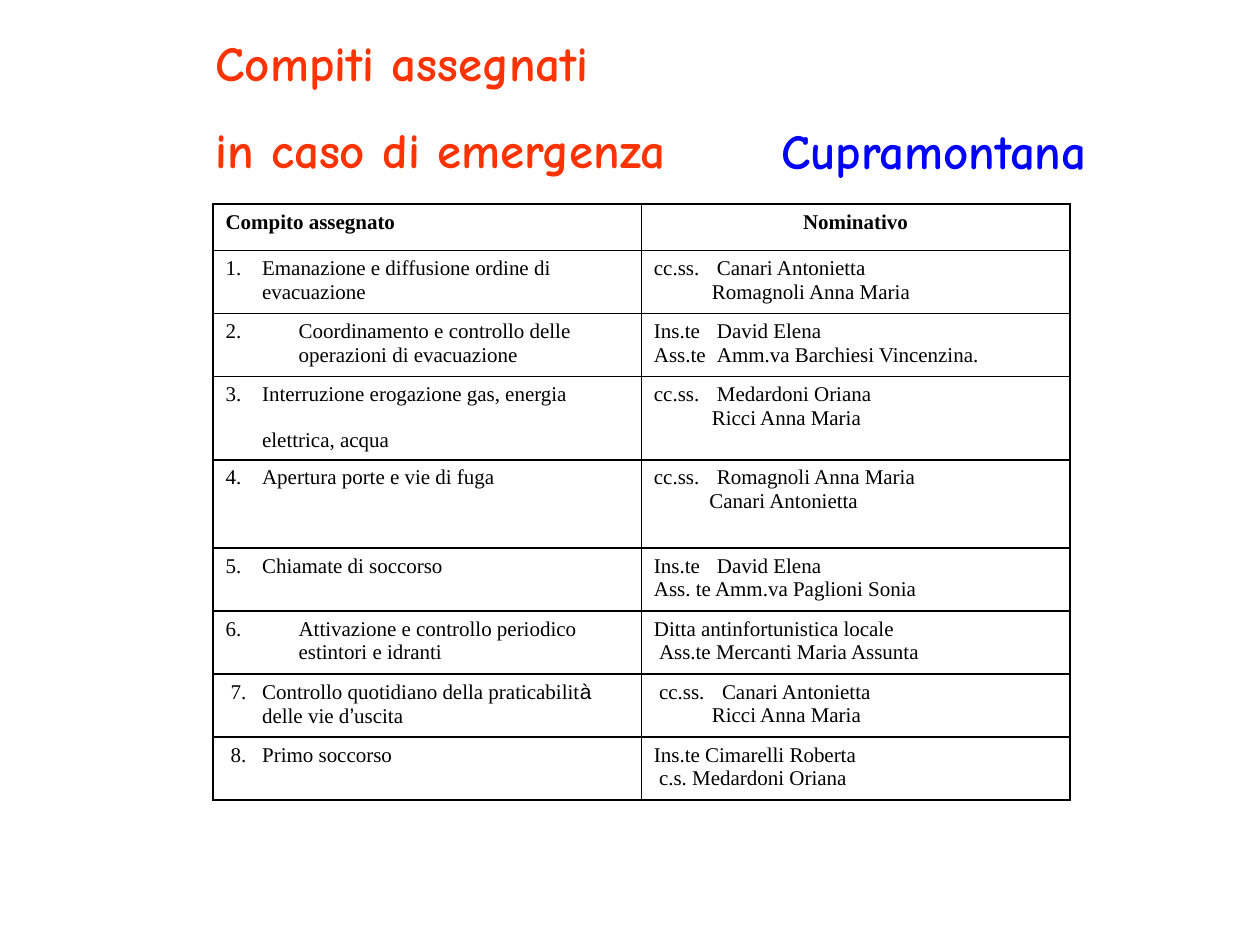
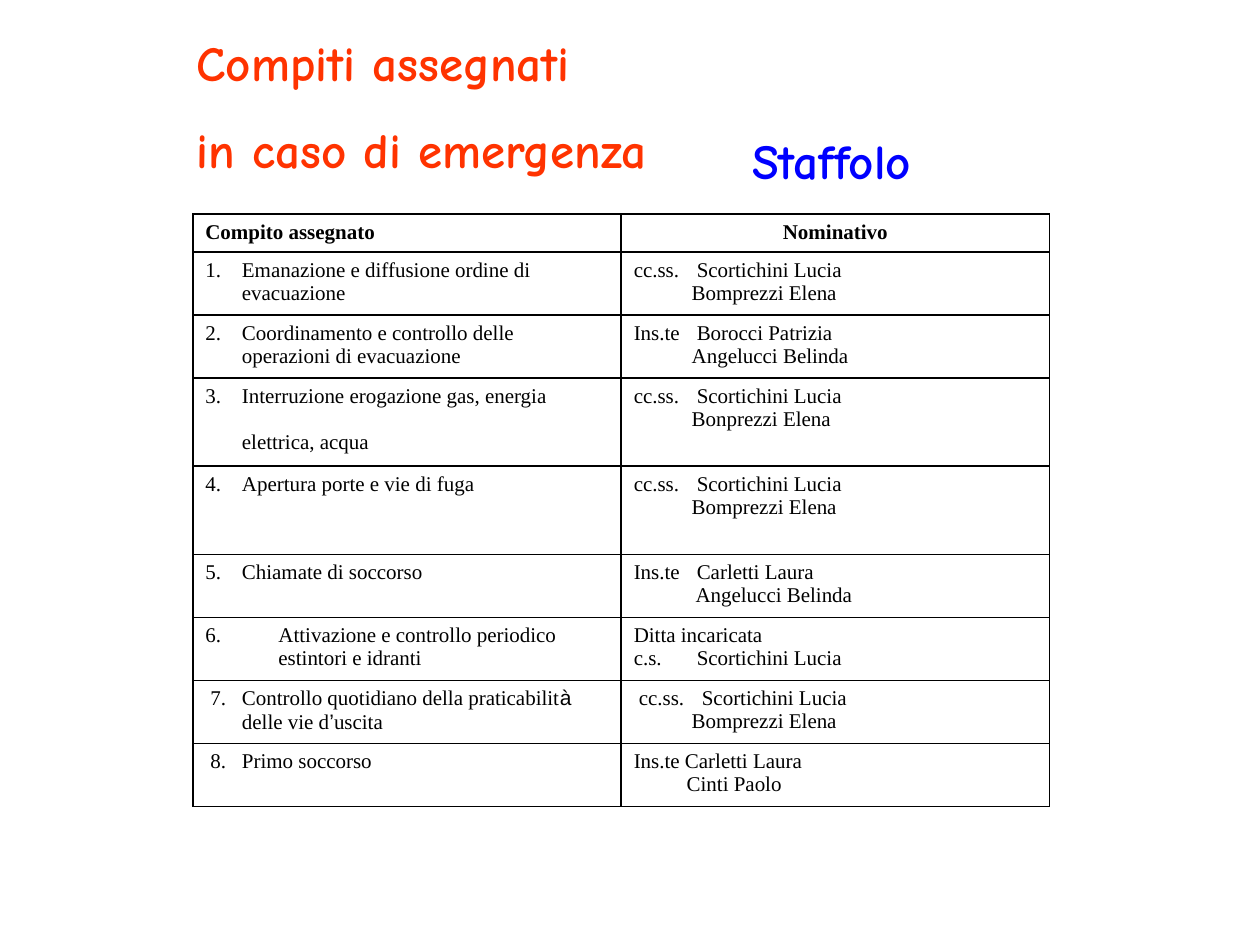
"""Build two slides listing emergency duties for two school sites."""
from dataclasses import dataclass
from itertools import groupby

from lxml.etree import SubElement
from pptx import Presentation
from pptx.dml.color import RGBColor
from pptx.enum.text import MSO_ANCHOR, MSO_AUTO_SIZE, PP_ALIGN
from pptx.oxml.ns import qn
from pptx.util import Inches, Pt


@dataclass(frozen=True)
class Theme:
    """Colours, fonts and sizes shared by the slides."""
    title_color: str = "FF3300"
    site_color: str = "0000FF"
    ink: str = "000000"
    heading_font: str = "Comic Neue"
    table_font: str = "Times New Roman"
    accent_font: str = "Arial"
    accent_letters: str = "à’"
    heading_size: int = 28
    table_size: int = 12
    heading_gap: int = 16
    border: float = 1


@dataclass(frozen=True)
class Line:
    """One line of a table cell with its indents in inches."""
    text: str
    left: float = 0
    start: float = 0
    tab: float = 0
    number: int = 0
    before: float = 0


THEME = Theme()
TITLE = ["Compiti assegnati", "in caso di emergenza"]
HEADERS = ["Compito assegnato", "Nominativo"]
COLUMN_WIDTH = 3.4
NARROW, WIDE, NUDGE = 0.29, 0.58, 0.04
NAME_INDENT, TEACHER_INDENT = 0.46, 0.49


def duty(number, lines, left=NARROW, start=0, gap=0):
    """Return a numbered line followed by its indented continuation lines."""
    first = Line(lines[0], left, start, number=number)
    return [first] + [Line(text, left, left, before=gap) for text in lines[1:]]


def pair(role, first, second, indent=NAME_INDENT, start=0):
    """Return two names aligned after a role."""
    return [Line(f"{role}\t{first}", start, start, tab=indent), Line(second, indent, indent)]


def duties(coordination_indent):
    """Return the eight duties, with the given indent for the second."""
    return [
        duty(1, ["Emanazione e diffusione ordine di", "evacuazione"]),
        duty(2, ["Coordinamento e controllo delle", "operazioni di evacuazione"], coordination_indent),
        duty(3, ["Interruzione erogazione gas, energia", "elettrica, acqua"], gap=13),
        duty(4, ["Apertura porte e vie di fuga"]),
        duty(5, ["Chiamate di soccorso"]),
        duty(6, ["Attivazione e controllo periodico", "estintori e idranti"], WIDE),
        duty(7, ["Controllo quotidiano della praticabilità", "delle vie d’uscita"], start=NUDGE),
        duty(8, ["Primo soccorso"], start=NUDGE),
    ]


CUPRAMONTANA_PEOPLE = [
    pair("cc.ss.", "Canari Antonietta", "Romagnoli Anna Maria"),
    [Line("Ins.te\tDavid Elena", tab=TEACHER_INDENT),
     Line("Ass.te\tAmm.va Barchiesi Vincenzina.", tab=TEACHER_INDENT)],
    pair("cc.ss.", "Medardoni Oriana", "Ricci Anna Maria"),
    pair("cc.ss.", "Romagnoli Anna Maria", "Canari Antonietta", 0.44),
    [Line("Ins.te\tDavid Elena", tab=TEACHER_INDENT), Line("Ass. te Amm.va Paglioni Sonia")],
    [Line("Ditta antinfortunistica locale"), Line("Ass.te Mercanti Maria Assunta", NUDGE, NUDGE)],
    pair("cc.ss.", "Canari Antonietta", "Ricci Anna Maria", start=NUDGE),
    [Line("Ins.te Cimarelli Roberta"), Line("c.s. Medardoni Oriana", NUDGE, NUDGE)],
]

STAFFOLO_PEOPLE = [
    pair("cc.ss.", "Scortichini Lucia", "Bomprezzi Elena"),
    pair("Ins.te", "Borocci Patrizia", "Angelucci Belinda"),
    pair("cc.ss.", "Scortichini Lucia", "Bonprezzi Elena"),
    pair("cc.ss.", "Scortichini Lucia", "Bomprezzi Elena"),
    pair("Ins.te", "Carletti Laura", "Angelucci Belinda", TEACHER_INDENT),
    [Line("Ditta incaricata"), Line("c.s.\tScortichini Lucia", tab=0.35)],
    pair("cc.ss.", "Scortichini Lucia", "Bomprezzi Elena", start=NUDGE),
    [Line("Ins.te Carletti Laura"), Line("Cinti Paolo", 0.42, 0.42)],
]


def add_text(paragraph, text, font=THEME.table_font, size=THEME.table_size,
             color=THEME.ink, bold=False, align=PP_ALIGN.LEFT, before=0):
    """Write formatted text, giving table accents their own font."""
    paragraph.alignment = align
    paragraph.space_before = Pt(before)
    accents = THEME.accent_letters if font == THEME.table_font else ""
    for is_accent, letters in groupby(text, lambda letter: letter in accents):
        run = paragraph.add_run()
        run.text = "".join(letters)
        run.font.name = THEME.accent_font if is_accent else font
        run.font.size = Pt(size)
        run.font.bold = bold
        run.font.color.rgb = RGBColor.from_string(color)


def next_paragraph(frame, index):
    """Return the first paragraph of a frame or a new one."""
    return frame.add_paragraph() if index else frame.paragraphs[0]


def indent_paragraph(paragraph, line):
    """Apply the indents, number and tab stop of a line."""
    properties = paragraph._p.get_or_add_pPr()
    properties.set("marL", str(Inches(line.left)))
    properties.set("indent", str(Inches(line.start) - Inches(line.left)))
    if line.number:
        SubElement(properties, qn("a:buFont"), typeface="+mj-lt")
        SubElement(properties, qn("a:buAutoNum"), type="arabicPeriod", startAt=str(line.number))
    if line.tab:
        tabs = SubElement(properties, qn("a:tabLst"))
        SubElement(tabs, qn("a:tab"), pos=str(Inches(line.tab)), algn="l")


def write_lines(cell, lines):
    """Fill a cell with indented lines."""
    for index, line in enumerate(lines):
        paragraph = next_paragraph(cell.text_frame, index)
        indent_paragraph(paragraph, line)
        add_text(paragraph, line.text, before=line.before)


def outline_cell(cell):
    """Give a cell thin borders and no fill."""
    properties = cell._tc.get_or_add_tcPr()
    for side in ("a:lnL", "a:lnR", "a:lnT", "a:lnB"):
        border = SubElement(properties, qn(side), w=str(Pt(THEME.border)))
        fill = SubElement(border, qn("a:solidFill"))
        SubElement(fill, qn("a:srgbClr"), val=THEME.ink)
    cell.fill.background()


def add_heading(shape, lines, color, left, top, width, height):
    """Place a shape and write its heading lines."""
    shape.left, shape.top = Inches(left), Inches(top)
    shape.width, shape.height = Inches(width), Inches(height)
    frame = shape.text_frame
    frame.word_wrap = True
    frame.auto_size = MSO_AUTO_SIZE.NONE
    frame.vertical_anchor = MSO_ANCHOR.TOP
    for index, text in enumerate(lines):
        paragraph = next_paragraph(frame, index)
        paragraph.line_spacing = 1.0
        add_text(paragraph, text, font=THEME.heading_font, size=THEME.heading_size, color=color,
                 bold=True, before=THEME.heading_gap if index else 0)


def add_duty_table(slide, left, top, heights, rows):
    """Add the table of duties and people."""
    frame = slide.shapes.add_table(len(heights), len(HEADERS), Inches(left), Inches(top),
                                   Inches(COLUMN_WIDTH * len(HEADERS)), Inches(sum(heights)))
    table = frame.table
    table.first_row = table.horz_banding = False
    for column in table.columns:
        column.width = Inches(COLUMN_WIDTH)
    for row, height in zip(table.rows, heights):
        row.height = Inches(height)
    for cell in table.iter_cells():
        outline_cell(cell)
    for index, (text, align) in enumerate(zip(HEADERS, (PP_ALIGN.LEFT, PP_ALIGN.CENTER))):
        add_text(table.cell(0, index).text_frame.paragraphs[0], text, bold=True, align=align)
    for row_index, row in enumerate(rows, 1):
        for column_index, lines in enumerate(row):
            write_lines(table.cell(row_index, column_index), lines)


def add_site_slide(presentation, site, site_box, title_box, table_at, heights, rows):
    """Add the slide of one school site."""
    slide = presentation.slides.add_slide(presentation.slide_layouts[5])
    add_duty_table(slide, *table_at, heights, rows)
    add_heading(slide.shapes.title, TITLE, THEME.title_color, *title_box)
    label = slide.shapes.add_textbox(0, 0, 0, 0)
    add_heading(label, [site], THEME.site_color, *site_box)


def row_heights(header, supplies):
    """Return row heights for the given header and supply rows."""
    return [header, 0.5, 0.5, supplies, 0.7] + [0.5] * 4


def main():
    """Build and save the presentation."""
    presentation = Presentation()
    presentation.slide_width, presentation.slide_height = Inches(10), Inches(7.5)
    add_site_slide(presentation, "Cupramontana", (6.1, 0.91, 2.99, 0.57), (1.61, 0.21, 4.17, 1.27),
                   (1.69, 1.62), row_heights(0.37, 0.66), zip(duties(WIDE), CUPRAMONTANA_PEOPLE))
    add_site_slide(presentation, "Staffolo", (5.87, 0.99, 2.28, 0.57), (1.46, 0.21, 4.73, 1.27),
                   (1.53, 1.7), row_heights(0.3, 0.7), zip(duties(NARROW), STAFFOLO_PEOPLE))
    presentation.save("out.pptx")


if __name__ == "__main__":
    main()
